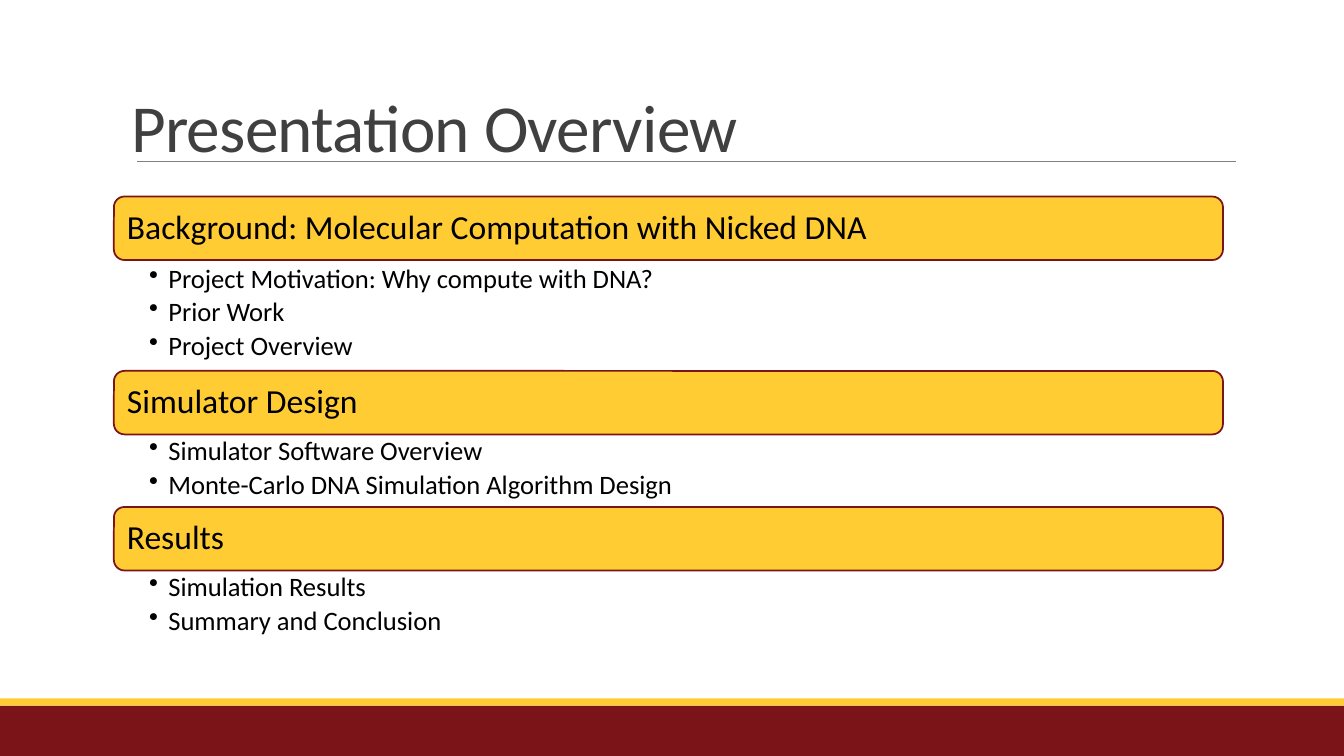
from lxml import etree
from pptx import Presentation
from pptx.dml.color import RGBColor
from pptx.enum.shapes import MSO_CONNECTOR, MSO_SHAPE
from pptx.enum.text import MSO_ANCHOR, MSO_AUTO_SIZE, PP_ALIGN
from pptx.oxml.ns import qn
from pptx.util import Inches, Pt

RECTANGLE = MSO_SHAPE.RECTANGLE
ROUNDED = MSO_SHAPE.ROUNDED_RECTANGLE
STRAIGHT = MSO_CONNECTOR.STRAIGHT
LEFT = PP_ALIGN.LEFT
TOP, MIDDLE, BOTTOM = MSO_ANCHOR.TOP, MSO_ANCHOR.MIDDLE, MSO_ANCHOR.BOTTOM
NO_AUTOFIT = MSO_AUTO_SIZE.NONE

COLORS = {
    "maroon": "7A1419",
    "gold": "FFCC33",
    "rule": "808080",
    "title": "404040",
    "text": "000000",
}
FONT = "Calibri"
SECTION_LEFT, SECTION_WIDTH, HEADING_HEIGHT = 1.13, 11, 0.63
SECTIONS = [
    (1.95, 2.6, 1.09, "Background: Molecular Computation with Nicked DNA",
     ["Project Motivation: Why compute with DNA?", "Prior Work", "Project Overview"]),
    (3.68, 4.31, 0.72, "Simulator Design",
     ["Simulator Software Overview", "Monte-Carlo DNA Simulation Algorithm Design"]),
    (5.03, 5.66, 1.09, "Results",
     ["Simulation Results", "Summary and Conclusion"]),
]


def add_filled_shape(kind, left, top, width, height, color):
    shape = slide.shapes.add_shape(
        kind, Inches(left), Inches(top), Inches(width), Inches(height))
    shape.shadow.inherit = False
    shape.fill.solid()
    shape.fill.fore_color.rgb = RGBColor.from_string(COLORS[color])
    shape.line.fill.background()
    return shape


def write_run(paragraph, text, size, color, line_spacing):
    paragraph.alignment = LEFT
    paragraph.line_spacing = line_spacing
    run = paragraph.add_run()
    run.text = text
    run.font.name = FONT
    run.font.size = Pt(size)
    run.font.color.rgb = RGBColor.from_string(COLORS[color])
    return run


presentation = Presentation()
presentation.slide_width = Inches(13.33)
presentation.slide_height = Inches(7.5)
slide = presentation.slides.add_slide(presentation.slide_layouts[5])

add_filled_shape(RECTANGLE, 0, 7, 13.33, 0.5, "maroon")
add_filled_shape(RECTANGLE, 0, 6.93, 13.33, 0.07, "gold")

title_rule = slide.shapes.add_connector(
    STRAIGHT, Inches(1.36), Inches(1.6), Inches(12.26), Inches(1.6))
title_rule.line.color.rgb = RGBColor.from_string(COLORS["rule"])
title_rule.line.width = Pt(0.5)
etree.SubElement(title_rule._element.spPr, qn("a:effectLst"))

title = slide.shapes.title
title.left, title.top = Inches(1.2), Inches(0.11)
title.width, title.height = Inches(11), Inches(1.59)
title.text_frame.auto_size = NO_AUTOFIT
title.text_frame.word_wrap = True
title.text_frame.vertical_anchor = BOTTOM
title_run = write_run(
    title.text_frame.paragraphs[0], "Presentation Overview", 48, "title", 0.85)
title_run.font._element.set("spc", "-50")

for heading_top, list_top, list_height, heading_text, topics in SECTIONS:
    heading = add_filled_shape(
        ROUNDED, SECTION_LEFT, heading_top, SECTION_WIDTH, HEADING_HEIGHT, "gold")
    heading.line.color.rgb = RGBColor.from_string(COLORS["maroon"])
    heading.line.width = Pt(1.25)
    heading_frame = heading.text_frame
    heading_frame.word_wrap = True
    heading_frame.vertical_anchor = MIDDLE
    heading_frame.margin_left = heading_frame.margin_right = Inches(0.1)
    write_run(heading_frame.paragraphs[0], heading_text, 24, "text", 0.9)

    topic_list = slide.shapes.add_textbox(
        Inches(SECTION_LEFT), Inches(list_top), Inches(SECTION_WIDTH), Inches(list_height))
    list_frame = topic_list.text_frame
    list_frame.word_wrap = True
    list_frame.vertical_anchor = TOP
    list_frame.margin_left, list_frame.margin_right = Inches(0.35), Inches(0.19)
    list_frame.margin_top = list_frame.margin_bottom = Inches(0.03)
    for index, topic in enumerate(topics):
        paragraph = list_frame.add_paragraph() if index else list_frame.paragraphs[0]
        paragraph.level = 1
        paragraph.space_after = Pt(3.5)
        write_run(paragraph, topic, 19, "text", 0.9)
        properties = paragraph._p.get_or_add_pPr()
        properties.set("marL", str(Inches(0.19)))
        properties.set("indent", str(Inches(-0.19)))
        etree.SubElement(properties, qn("a:buChar"), char="•")

presentation.save("out.pptx")
